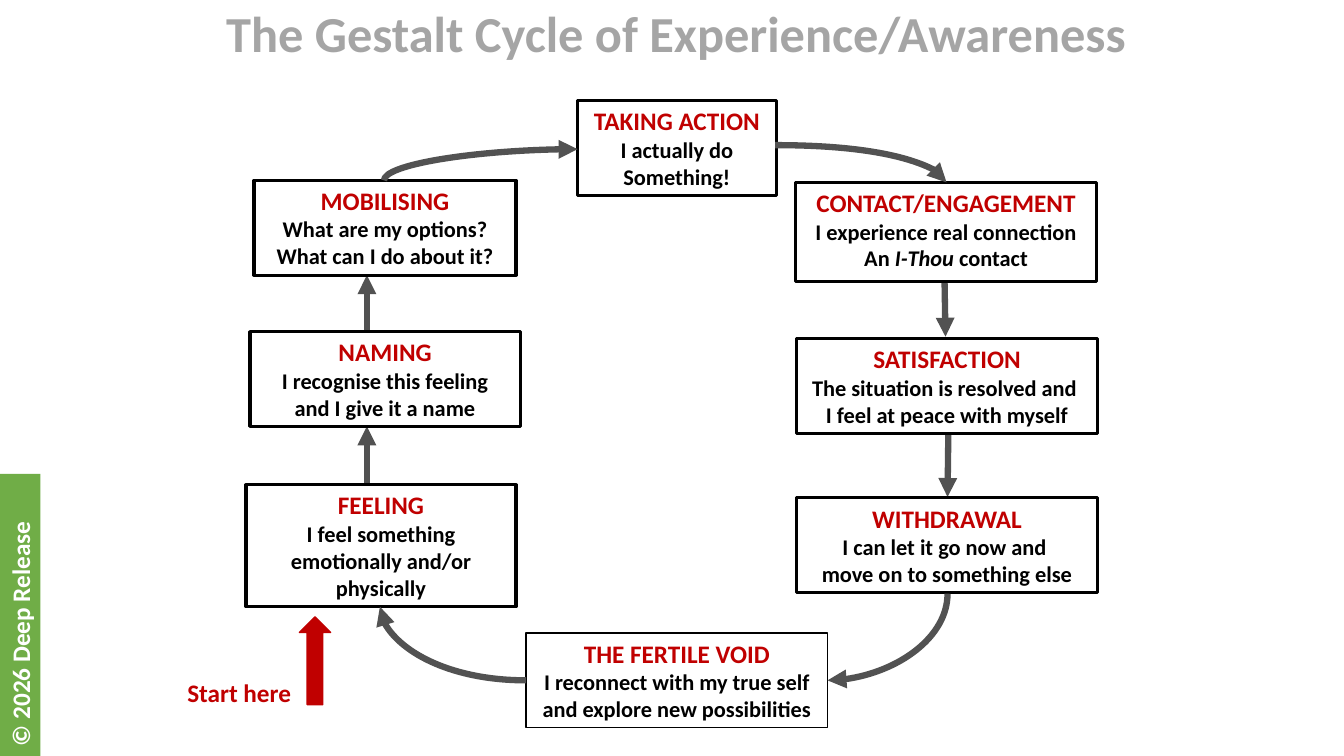
from dataclasses import dataclass

from lxml.etree import SubElement
from pptx import Presentation
from pptx.dml.color import RGBColor
from pptx.enum.shapes import MSO_CONNECTOR, MSO_SHAPE
from pptx.enum.text import MSO_ANCHOR, MSO_AUTO_SIZE, PP_ALIGN
from pptx.oxml.ns import qn
from pptx.util import Inches, Pt


@dataclass(frozen=True)
class Theme:
    font: str = "Calibri"
    red: str = "C00000"
    black: str = "000000"
    white: str = "FFFFFF"
    green: str = "70AD47"
    arrow_grey: str = "525252"
    title_grey: str = "A5A5A5"
    title_size: float = 36
    heading_size: float = 18
    body_size: float = 16
    outline: float = 2.25
    thin: float = 1
    arrow_width: float = 4.5


class CycleSlide:
    """Places elements on a grid of 80 columns by 45 rows."""

    def __init__(self, deck, theme):
        self.theme = theme
        self.slide = deck.slides.add_slide(deck.slide_layouts[5])
        self.column = deck.slide_width / 80
        self.row = deck.slide_height / 45

    def place(self, left, top, width, height):
        return (round(left * self.column), round(top * self.row),
                round(width * self.column), round(height * self.row))

    def set_text(self, frame, lines, align=PP_ALIGN.CENTER, wrap=True):
        """Each line is (text, size, colour); *stars* enclose italics."""
        frame.word_wrap = wrap
        frame.auto_size = MSO_AUTO_SIZE.SHAPE_TO_FIT_TEXT
        frame.vertical_anchor = MSO_ANCHOR.TOP
        for index, (text, size, colour) in enumerate(lines):
            paragraph = frame.add_paragraph() if index else frame.paragraphs[0]
            paragraph.alignment = align
            for part, words in enumerate(text.split("*")):
                run = paragraph.add_run()
                run.text = words
                if part % 2:
                    run.font.italic = True
            font = paragraph.font
            font.name, font.size, font.bold = self.theme.font, Pt(size), True
            font.color.rgb = RGBColor.from_string(colour)

    def title(self, text, area):
        heading = self.slide.shapes.title
        heading.left, heading.top, heading.width, heading.height = self.place(*area)
        self.set_text(heading.text_frame,
                      [(text, self.theme.title_size, self.theme.title_grey)], wrap=False)

    def block(self, kind, area, fill, line=None, width=0):
        block = self.slide.shapes.add_shape(kind, *self.place(*area))
        block.shadow.inherit = False
        block.fill.solid()
        block.fill.fore_color.rgb = RGBColor.from_string(fill)
        if line:
            block.line.color.rgb = RGBColor.from_string(line)
            block.line.width = Pt(width)
        else:
            block.line.fill.background()
        return block

    def stage(self, area, outline, heading, *body):
        theme = self.theme
        card = self.block(MSO_SHAPE.RECTANGLE, area, theme.white, theme.black, outline)
        self.set_text(card.text_frame,
                      [(heading, theme.heading_size, theme.red)]
                      + [(text, theme.body_size, theme.black) for text in body])

    def label(self, text, area):
        caption = self.slide.shapes.add_textbox(*self.place(*area))
        self.set_text(caption.text_frame, [(text, self.theme.heading_size, self.theme.red)],
                      PP_ALIGN.LEFT, wrap=False)

    def side_tab(self, text, area):
        tab = self.block(MSO_SHAPE.RECTANGLE, area, self.theme.green)
        tab.rotation = 270
        self.set_text(tab.text_frame, [(text, self.theme.heading_size, self.theme.white)],
                      PP_ALIGN.LEFT, wrap=False)

    def arrow(self, start, end, curved=False, upright=False):
        """An upright curve leaves its start vertically, by a quarter turn."""
        x1, y1, x2, y2 = self.place(*start, *end)
        if upright:
            middle_x, middle_y = (x1 + x2) // 2, (y1 + y2) // 2
            x1, y1, x2, y2 = (middle_x + y1 - middle_y, middle_y - x1 + middle_x,
                              middle_x + y2 - middle_y, middle_y - x2 + middle_x)
        kind = MSO_CONNECTOR.CURVE if curved else MSO_CONNECTOR.STRAIGHT
        link = self.slide.shapes.add_connector(kind, x1, y1, x2, y2)
        link.line.color.rgb = RGBColor.from_string(self.theme.arrow_grey)
        link.line.width = Pt(self.theme.arrow_width)
        properties = link._element.spPr
        if curved:
            properties.find(qn("a:prstGeom")).set("prst", "curvedConnector2")
        if upright:
            properties.find(qn("a:xfrm")).set("rot", "5400000")
        SubElement(properties.find(qn("a:ln")), qn("a:tailEnd"), type="triangle")
        SubElement(properties, qn("a:effectLst"))


def main():
    deck = Presentation()
    deck.slide_width, deck.slide_height = Inches(13.33), Inches(7.5)
    theme = Theme()
    cycle = CycleSlide(deck, theme)

    cycle.title("The Gestalt Cycle of Experience/Awareness", (12.6, -0.18, 55.32, 4.26))

    # Straight arrows: down the right side, up the left side
    for start, end in (((56.22, 16.44), (56.28, 20.04)),
                       ((56.46, 24.9), (56.4, 29.58)),
                       ((21.84, 29.64), (21.84, 25.38)),
                       ((21.84, 20.34), (21.84, 16.38))):
        cycle.arrow(start, end)

    # Stages of the cycle
    wide, medium, tall = 17.94, 16.08, 5.64
    stages = (
        ((31.32, 37.68, wide, tall), theme.thin, "THE FERTILE VOID",
         "I reconnect with my true self", "and explore new possibilities"),
        ((14.64, 28.86, medium, 7.26), theme.outline, "FEELING",
         "I feel something emotionally and/or physically"),
        ((14.88, 19.74, medium, tall), theme.outline, "NAMING",
         "I recognise this feeling", "and I give it a name"),
        ((15.12, 10.74, 15.6, tall), theme.outline, "MOBILISING",
         "What are my options?", "What can I do about it?"),
        ((34.38, 6, 11.82, tall), theme.outline, "TAKING ACTION",
         "I actually do", "Something!"),
        ((47.34, 10.86, wide, 5.88), theme.outline, "CONTACT/ENGAGEMENT",
         "I experience real connection", "An *I-Thou *contact"),
        ((47.4, 20.16, wide, tall), theme.outline, "SATISFACTION",
         "The situation is resolved and ", "I feel at peace with myself"),
        ((47.4, 29.64, wide, tall), theme.outline, "WITHDRAWAL",
         "I can let it go now and ", "move on to something else"),
    )
    for stage in stages:
        cycle.stage(*stage)

    # Curved arrows at the top and bottom of the cycle
    for start, end, upright in (((31.32, 40.5), (22.62, 36.12), False),
                                ((56.4, 35.34), (49.26, 40.5), True),
                                ((22.86, 10.74), (34.38, 8.88), True),
                                ((46.14, 8.64), (56.34, 10.86), False)):
        cycle.arrow(start, end, curved=True, upright=upright)

    # Starting point
    cycle.block(MSO_SHAPE.UP_ARROW, (17.82, 36.72, 1.86, 5.22),
                theme.red, theme.red, theme.thin)
    cycle.label("Start here", (10.56, 40.02, 7.44, 2.4))

    # Copyright tab
    cycle.side_tab("© 2026 Deep Release Ltd", (-7.2, 35.4, 16.8, 2.4))

    deck.save("out.pptx")


if __name__ == "__main__":
    main()
